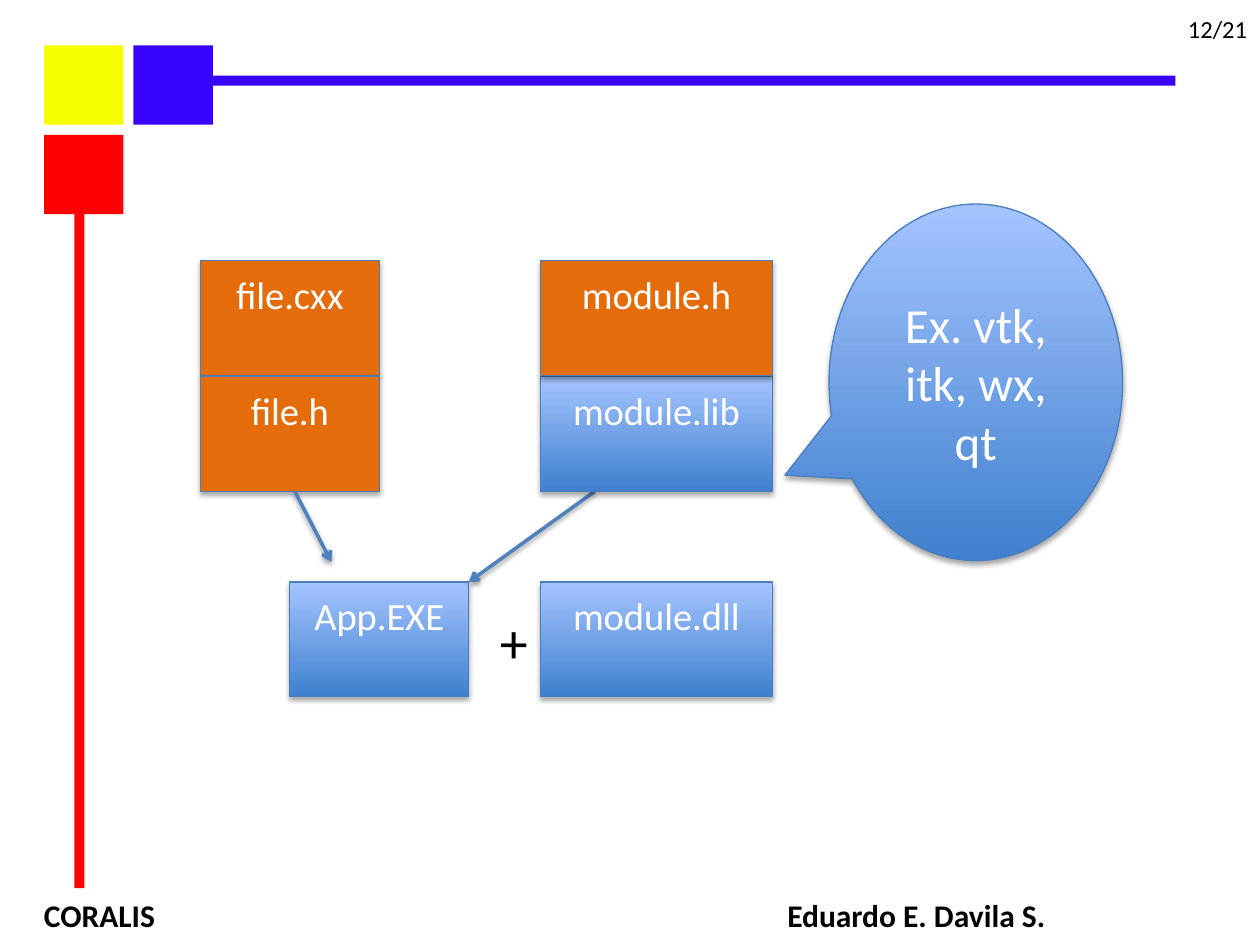
from dataclasses import dataclass

from lxml import etree
from pptx import Presentation
from pptx import util as u
from pptx.dml.color import RGBColor
from pptx.enum import shapes, text
from pptx.oxml import ns


@dataclass(frozen=True)
class Theme:
    font: str = "Calibri"
    yellow: str = "F7FD01"
    red: str = "FC0202"
    blue: str = "3803FB"
    orange: str = "E46C0A"
    gradient: tuple = ("3F80CE", "A4C4FF")
    outline: str = "4B7EBC"
    arrow: str = "4F81BD"
    black: str = "000000"
    white: str = "FFFFFF"
    page: int = 14
    footer: int = 18
    label: int = 22
    callout: int = 28
    plus: int = 32


T = Theme()
SHAPE = shapes.MSO_SHAPE


def rgb(value):
    return RGBColor.from_string(value)


def child(parent, tag, **attrs):
    return etree.SubElement(parent, ns.qn(tag), {k: str(v) for k, v in attrs.items()})


def add_run(p, words, size, color, bold=False):
    r = p.add_run()
    r.text = words
    r.font.name = T.font
    r.font.size = u.Pt(size)
    r.font.bold = bold
    r.font.color.rgb = rgb(color)


def add_shadow(sp, opacity, blur, distance):
    properties = sp._element.spPr
    for old in properties.findall(ns.qn("a:effectLst")):
        properties.remove(old)
    effects = child(properties, "a:effectLst")
    outer = child(effects, "a:outerShdw", blurRad=u.Pt(blur), dist=u.Pt(distance),
                  dir=5400000, rotWithShape=0)
    color = child(outer, "a:srgbClr", val=T.black)
    child(color, "a:alpha", val=opacity * 1000)


def add_bar(s, box, color):
    sp = s.shapes.add_shape(SHAPE.RECTANGLE, *map(u.Inches, box))
    sp.shadow.inherit = False
    sp.fill.solid()
    sp.fill.fore_color.rgb = rgb(color)
    sp.line.fill.background()


def add_label(s, box, words, size, color, wrap=True, bold=False):
    sp = s.shapes.add_textbox(*map(u.Inches, box))
    sp.text_frame.word_wrap = wrap
    p = sp.text_frame.paragraphs[0]
    add_run(p, words, size, color, bold)
    return p


def add_block(s, box, words, size, fill=None, kind=SHAPE.RECTANGLE):
    sp = s.shapes.add_shape(kind, *map(u.Inches, box))
    if fill:
        sp.fill.solid()
        sp.fill.fore_color.rgb = rgb(fill)
    else:
        sp.fill.gradient()
        sp.fill.gradient_angle = 90
        for stop, color in zip(sp.fill.gradient_stops, T.gradient):
            stop.color.rgb = rgb(color)
    sp.line.color.rgb = rgb(T.outline)
    sp.line.width = u.Pt(0.75)
    add_shadow(sp, 35, 3.1, 1.8)
    tf = sp.text_frame
    tf.word_wrap = True
    tf.vertical_anchor = text.MSO_ANCHOR.MIDDLE
    p = tf.paragraphs[0]
    p.alignment = text.PP_ALIGN.CENTER
    add_run(p, words, size, T.white)
    return sp


def add_file(s, box, words, fill=None):
    tf = add_block(s, box, words, T.label, fill).text_frame
    tf.vertical_anchor = text.MSO_ANCHOR.TOP
    tf.margin_top = u.Inches(0.08)


def add_arrow(s, start, end):
    line = s.shapes.add_connector(shapes.MSO_CONNECTOR.STRAIGHT,
                                  *map(u.Inches, start + end))
    line.line.color.rgb = rgb(T.arrow)
    line.line.width = u.Pt(2)
    child(line.line._get_or_add_ln(), "a:tailEnd", type="arrow")
    add_shadow(line, 38, 3.1, 1.6)


def add_frame(s, box):
    left, top, width, height = box
    side, pitch, thick = 0.63, 0.71, 0.08
    for column, row, color in ((0, 0, T.yellow), (0, 1, T.red), (1, 0, T.blue)):
        add_bar(s, (left + column * pitch, top + row * pitch, side, side), color)
    add_bar(s, (left + 1.18, top + 0.24, width - 1.18, thick), T.blue)
    add_bar(s, (left + 0.24, top + 1.26, thick, height - 1.26), T.red)


def add_footer(s, box):
    p = add_label(s, box, "CORALIS\tEduardo E. Davila S.", T.footer, T.black, bold=True)
    p.space_before = u.Pt(3.6)
    tabs = child(p._p.get_or_add_pPr(), "a:tabLst")
    child(tabs, "a:tab", pos=u.Inches(5.9), algn="l")


def add_build_diagram(s, box):
    left, top, width, height = box
    narrow, wide, tall = 1.42, 1.84, 0.91
    module = left + width - wide
    app = left + 0.71
    second = top + 0.92
    output = top + height - tall
    sources_end = second + tall
    add_file(s, (app, output, narrow, tall), "App.EXE")
    add_file(s, (left, top, narrow, tall), "file.cxx", T.orange)
    add_file(s, (left, second, narrow, tall), "file.h", T.orange)
    add_arrow(s, (app + 0.04, sources_end), (app + 0.33, output - 0.16))
    add_arrow(s, (module + 0.43, sources_end), (app + narrow, output))
    add_file(s, (module, second, wide, tall), "module.lib")
    add_file(s, (module, top, wide, tall), "module.h", T.orange)
    add_file(s, (module, output, wide, tall), "module.dll")
    add_label(s, (module - 0.42, output + 0.15, 0.43, 0.64), "+", T.plus, T.black, wrap=False)


def add_callout(s, box):
    sp = add_block(s, box, "Ex. vtk, itk, wx, qt", T.callout, kind=SHAPE.OVAL_CALLOUT)
    sp.adjustments[0] = -0.65
    sp.adjustments[1] = 0.26


def main():
    prs = Presentation()
    prs.slide_width, prs.slide_height = u.Inches(10), u.Inches(7.5)
    s = prs.slides.add_slide(prs.slide_layouts[6])
    add_frame(s, (0.35, 0.36, 8.98, 6.69))
    add_footer(s, (0.25, 7.06, 9.75, 0.31))
    add_label(s, (9.33, 0.06, 0.87, 0.33), "12/21", T.page, T.black)
    add_build_diagram(s, (1.59, 2.07, 4.54, 3.46))
    add_callout(s, (6.58, 1.62, 2.33, 2.83))
    prs.save("out.pptx")


if __name__ == "__main__":
    main()
